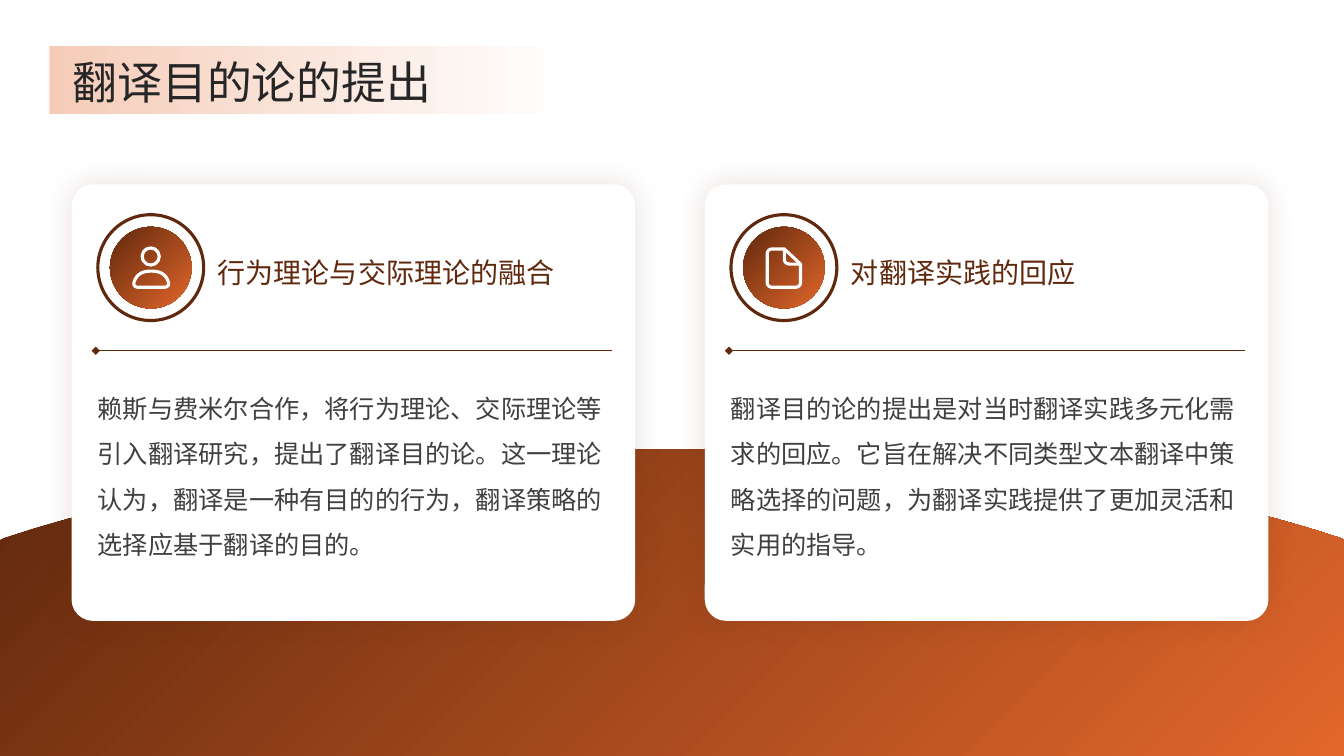
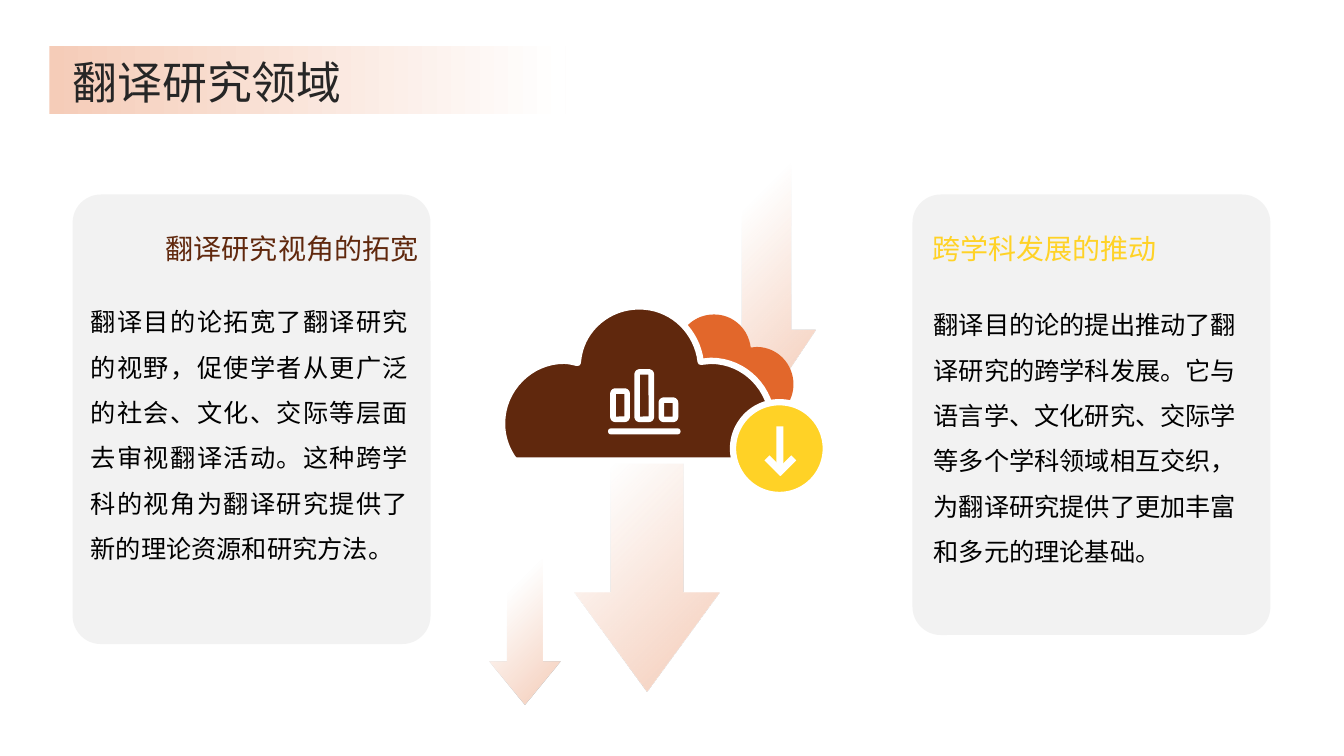
from lxml.etree import SubElement
from pptx import Presentation
from pptx.dml.color import RGBColor
from pptx.enum.shapes import MSO_CONNECTOR as Connector, MSO_SHAPE as Shape
from pptx.enum.text import MSO_ANCHOR as Anchor, MSO_AUTO_SIZE as AutoSize, PP_ALIGN as Align
from pptx.oxml.ns import qn
from pptx.util import Emu, Pt

EMU_PER_PX = 9144
SLIDE_SIZE = (1333, 750)
FONT = "Noto Sans CJK SC"
BROWN, ORANGE, YELLOW, PEACH = "60280D", "E2672B", "FFD226", "F5CCB8"
WHITE, PANEL, TITLE_INK, BODY_INK, BLACK = "FFFFFF", "F2F2F2", "262626", "404040", "000000"

HILL = [(667, 446), (934, 446, 1172, 481, 1330, 534), (1333, 536), (1333, 750), (0, 750),
        (0, 536), (4, 534), (161, 481, 400, 446, 667, 446)]
CLOUD_WIDTH = 268
CLOUD = [(136, 0), (166, 0, 190, 21, 196, 49), (197, 55), (207, 54), (241, 54, 268, 82, 268, 116),
         (268, 129, 264, 141, 257, 151), (256, 153), (13, 153), (11, 151), (4, 141, 0, 129, 0, 116),
         (0, 82, 28, 54, 61, 54), (66, 54, 70, 55, 74, 56), (75, 56), (76, 49),
         (81, 21, 106, 0, 136, 0)]
SHOULDERS = [(41, 44), (51, 44, 56, 48, 58, 55), (59, 58, 57, 60, 54, 60), (28, 60),
             (25, 60, 23, 58, 24, 55), (26, 48, 31, 44, 41, 44)]
PAGE = [(41, 22), (29, 22), (26, 22, 24, 24, 24, 27), (24, 55), (24, 58, 26, 60, 29, 60), (52, 60),
        (55, 60, 57, 58, 57, 55), (57, 37)]
PAGE_FOLD = [(41, 22), (41, 32), (41, 35, 43, 37, 47, 37), (57, 37)]


def px(length):
    return Emu(round(length * EMU_PER_PX))


def rgb(color):
    return RGBColor.from_string(color)


def style(shape, fill=None, line=None, width=0):
    shape.shadow.inherit = False
    if fill:
        shape.fill.solid()
        shape.fill.fore_color.rgb = rgb(fill)
    else:
        shape.fill.background()
    if line:
        shape.line.color.rgb = rgb(line)
        shape.line.width = Pt(width)
    else:
        shape.line.fill.background()
    return shape


def apply_gradient(shape, start, end, angle=45, first=0):
    shape.fill.gradient()
    shape.fill.gradient_angle = -angle % 360
    for stop, color, position in zip(shape.fill.gradient_stops, (start, end), (first, 1)):
        stop.color.rgb = rgb(color)
        stop.position = position


def add_shape(slide, kind, box, fill=None, line=None, width=0, adjust=()):
    shape = slide.shapes.add_shape(kind, *map(px, box))
    for index, value in enumerate(adjust):
        shape.adjustments[index] = value
    return style(shape, fill, line, width)


def flatten(outline, steps=16):
    points = [outline[0]]
    for segment in outline[1:]:
        if len(segment) == 2:
            points.append(segment)
            continue
        x0, y0 = points[-1]
        x1, y1, x2, y2, x3, y3 = segment
        for step in range(1, steps + 1):
            t = step / steps
            a, b, c, d = (1 - t) ** 3, 3 * t * (1 - t) ** 2, 3 * t * t * (1 - t), t ** 3
            points.append((a * x0 + b * x1 + c * x2 + d * x3, a * y0 + b * y1 + c * y2 + d * y3))
    return points


def add_outline(slide, outline, left=0, top=0, scale=1, close=True, **look):
    points = [(px(left + x * scale), px(top + y * scale)) for x, y in flatten(outline)]
    builder = slide.shapes.build_freeform(*points[0])
    builder.add_line_segments(points[1:], close=close)
    return style(builder.convert_to_shape(), **look)


def set_text(shape, text, size, color, spacing, align=Align.LEFT, anchor=Anchor.TOP):
    frame = shape.text_frame
    frame.word_wrap = True
    frame.auto_size = AutoSize.NONE
    frame.vertical_anchor = anchor
    frame.margin_left = frame.margin_right = frame.margin_top = frame.margin_bottom = 0
    frame.text = text
    paragraph = frame.paragraphs[0]
    paragraph.alignment = align
    paragraph.line_spacing = spacing
    font = paragraph.font
    font.size = Pt(size)
    font.color.rgb = rgb(color)
    font.name = FONT
    SubElement(font._element, qn("a:ea"), typeface=FONT)


def add_text(slide, box, *args, **options):
    set_text(slide.shapes.add_textbox(*map(px, box)), *args, **options)


def add_titled_slide(presentation, text):
    slide = presentation.slides.add_slide(presentation.slide_layouts[5])
    band = add_shape(slide, Shape.RECTANGLE, (49, 46, 512, 67))
    apply_gradient(band, PEACH, WHITE, angle=0)
    title = slide.shapes.title
    title.left, title.top, title.width, title.height = map(px, (72, 53, 1188, 51))
    set_text(title, text, 32, TITLE_INK, 1.1, anchor=Anchor.MIDDLE)
    slide.shapes._spTree.append(title._element)
    return slide


def add_glow(shape):
    effects = shape._element.spPr.find(qn("a:effectLst"))
    shadow = SubElement(effects, qn("a:outerShdw"), blurRad=str(Pt(20)), dist="0",
                        dir="16200000", algn="ctr", rotWithShape="0")
    color = SubElement(shadow, qn("a:srgbClr"), val=BROWN)
    SubElement(color, qn("a:alpha"), val="15000")


def add_divider(slide, left, top, length):
    line = slide.shapes.add_connector(Connector.STRAIGHT, px(left), px(top), px(left + length), px(top))
    line.line.color.rgb = rgb(BROWN)
    line.line.width = Pt(0.5)
    SubElement(line.line._get_or_add_ln(), qn("a:headEnd"), type="diamond")
    SubElement(line._element.spPr, qn("a:effectLst"))


def add_person_icon(slide, left, top):
    add_shape(slide, Shape.OVAL, (left + 32, top + 21, 17, 17), line=WHITE, width=2.25)
    add_outline(slide, SHOULDERS, left, top, line=WHITE, width=2.25)


def add_page_icon(slide, left, top):
    add_outline(slide, PAGE, left, top, line=WHITE, width=2.25)
    add_outline(slide, PAGE_FOLD, left, top, close=False, line=WHITE, width=2.25)


def add_card(slide, left, top, add_icon, heading, body):
    card = add_shape(slide, Shape.ROUNDED_RECTANGLE, (left, top, 559, 433), WHITE, adjust=[0.049])
    add_glow(card)
    add_shape(slide, Shape.OVAL, (left + 26, top + 30, 105, 105), line=BROWN, width=2.25)
    disc = add_shape(slide, Shape.OVAL, (left + 38, top + 42, 81, 81))
    apply_gradient(disc, BROWN, ORANGE)
    add_icon(slide, left + 38, top + 42)
    add_text(slide, (left + 145, top + 29, 391, 106), heading, 20, BROWN, 1.3, anchor=Anchor.MIDDLE)
    add_divider(slide, left + 24, top + 165, 512)
    add_text(slide, (left + 26, top + 192, 510, 209), body, 18, BODY_INK, 1.5)


def add_panel(slide, box, heading, heading_at, heading_color, heading_align, body, body_at, body_align):
    left, top = box[:2]
    add_shape(slide, Shape.ROUNDED_RECTANGLE, box, PANEL, adjust=[0.079])
    add_text(slide, (left + heading_at[0], top + heading_at[1], 315, 45), heading, 20,
             heading_color, 1.5, heading_align, Anchor.BOTTOM)
    add_text(slide, (left + body_at[0], top + body_at[1], 315, 212), body, 18, BLACK, 1.5, body_align)


def add_fading_arrow(slide, box, head):
    arrow = add_shape(slide, Shape.DOWN_ARROW, box, adjust=[0.5, head])
    apply_gradient(arrow, PEACH, PEACH, first=0.24)
    first_color = next(arrow._element.spPr.iter(qn("a:srgbClr")))
    SubElement(first_color, qn("a:alpha"), val="0")


def add_bar_icon(slide, left, top):
    for index, height in enumerate((28, 47, 19)):
        box = (left + 5 + 24 * index, top + 50 - height, 14, height)
        add_shape(slide, Shape.ROUNDED_RECTANGLE, box, line=WHITE, width=4)
    add_shape(slide, Shape.ROUNDED_RECTANGLE, (left, top + 59, 72, 6), WHITE, adjust=[0.5])


def add_download_badge(slide, left, top):
    add_shape(slide, Shape.OVAL, (left, top, 92, 92), YELLOW, WHITE, 4.5)
    for x, y, height, rotation in ((43, 24, 45, 0), (49, 52, 22, 45), (38, 52, 22, 315)):
        stroke = add_shape(slide, Shape.RECTANGLE, (left + x, top + y, 7, height), WHITE)
        stroke.rotation = rotation


def add_cloud_scene(slide, left, top):
    for x, y, width, height, head in ((72, 91, 144, 291, 0.685), (-13, 251, 71, 144, 0.608),
                                      (214, -154, 97, 250, 0.756)):
        add_fading_arrow(slide, (left + x, top + y, width, height), head)
    add_outline(slide, CLOUD, left + 129, top + 8, 160 / CLOUD_WIDTH, fill=ORANGE)
    add_outline(slide, CLOUD, left, top, fill=BROWN, line=WHITE, width=4.5)
    add_bar_icon(slide, left + 105, top + 62)
    add_download_badge(slide, left + 229, top + 95)


def build_origin_slide(presentation):
    slide = add_titled_slide(presentation, "翻译目的论的提出")
    hill = add_outline(slide, HILL)
    apply_gradient(hill, BROWN, ORANGE)
    cards = (
        (add_person_icon, "行为理论与交际理论的融合",
         "赖斯与费米尔合作，将行为理论、交际理论等引入翻译研究，提出了翻译目的论。"
         "这一理论认为，翻译是一种有目的的行为，翻译策略的选择应基于翻译的目的。"),
        (add_page_icon, "对翻译实践的回应",
         "翻译目的论的提出是对当时翻译实践多元化需求的回应。"
         "它旨在解决不同类型文本翻译中策略选择的问题，为翻译实践提供了更加灵活和实用的指导。"),
    )
    for index, card in enumerate(cards):
        add_card(slide, 71 + 628 * index, 183, *card)


def build_field_slide(presentation):
    slide = add_titled_slide(presentation, "翻译研究领域")
    add_cloud_scene(slide, 498, 304)
    add_panel(slide, (72, 193, 355, 446), "翻译研究视角的拓宽", (28, 25), BROWN, Align.RIGHT,
              "翻译目的论拓宽了翻译研究的视野，促使学者从更广泛的社会、文化、交际等层面去审视翻译活动。"
              "这种跨学科的视角为翻译研究提供了新的理论资源和研究方法。", (18, 96), Align.JUSTIFY)
    add_panel(slide, (905, 193, 355, 437), "跨学科发展的推动", (20, 25), YELLOW, Align.LEFT,
              "翻译目的论的提出推动了翻译研究的跨学科发展。"
              "它与语言学、文化研究、交际学等多个学科领域相互交织，为翻译研究提供了更加丰富和多元的理论基础。",
              (21, 99), Align.LEFT)


def main():
    presentation = Presentation()
    presentation.slide_width, presentation.slide_height = map(px, SLIDE_SIZE)
    build_origin_slide(presentation)
    build_field_slide(presentation)
    presentation.save("out.pptx")


if __name__ == "__main__":
    main()
